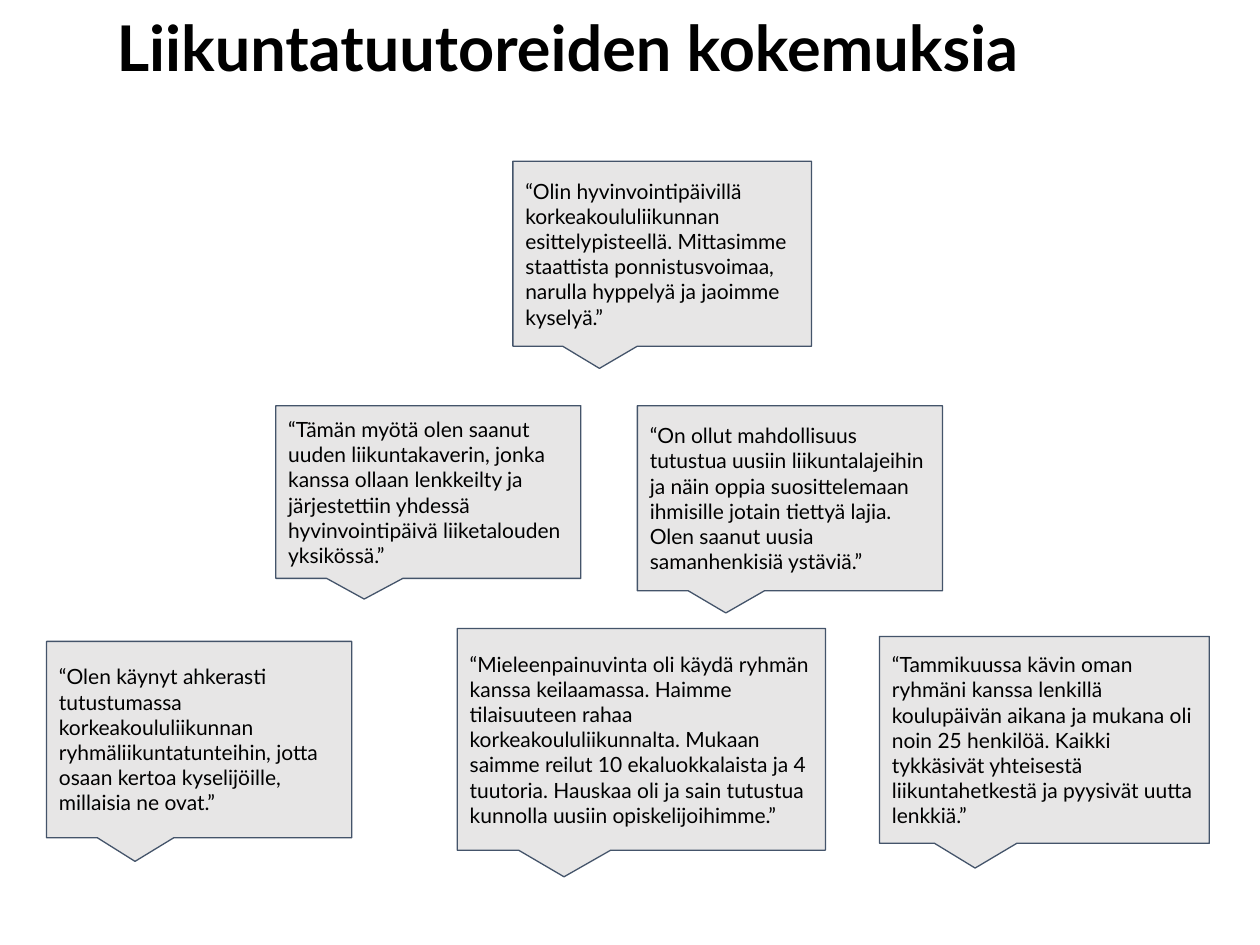
"""Build a slide of exercise tutors' experiences quoted in speech callouts."""
from pptx import Presentation
from pptx.dml.color import RGBColor
from pptx.enum.shapes import MSO_SHAPE
from pptx.enum.text import MSO_ANCHOR, MSO_AUTO_SIZE, PP_ALIGN
from pptx.util import Cm, Pt

CALLOUT = MSO_SHAPE.ROUNDED_RECTANGULAR_CALLOUT
MIDDLE = MSO_ANCHOR.MIDDLE
NO_AUTOFIT = MSO_AUTO_SIZE.NONE
CENTER, LEFT = PP_ALIGN.CENTER, PP_ALIGN.LEFT
TITLE_ONLY = 5

COLOURS = {"text": "000000", "callout": "E7E6E6", "outline": "44546A"}

HEADING = "Liikuntatuutoreiden kokemuksia"
HEADING_BOX = (0.2, 0, 22.48, 2.06)

QUOTES = [
    ("“Mieleenpainuvinta oli käydä ryhmän kanssa keilaamassa. Haimme tilaisuuteen "
     "rahaa korkeakoululiikunnalta. Mukaan saimme reilut 10 ekaluokkalaista ja 4 "
     "tuutoria. Hauskaa oli ja sain tutustua kunnolla uusiin opiskelijoihimme.”",
     (9.22, 12.67, 7.42, 4.47)),
    ("“Olin hyvinvointipäivillä korkeakoululiikunnan esittelypisteellä. Mittasimme "
     "staattista ponnistusvoimaa, narulla hyppelyä ja jaoimme kyselyä.”",
     (10.34, 3.25, 6.02, 3.73)),
    ("“Tämän myötä olen saanut uuden liikuntakaverin, jonka kanssa ollaan lenkkeilty "
     "ja järjestettiin yhdessä hyvinvointipäivä liiketalouden yksikössä.”",
     (5.56, 8.18, 6.15, 3.48)),
    ("“Olen käynyt ahkerasti tutustumassa korkeakoululiikunnan "
     "ryhmäliikuntatunteihin, jotta osaan kertoa kyselijöille, millaisia ne ovat.”",
     (0.94, 12.93, 6.15, 3.96)),
    ("“Tammikuussa kävin oman ryhmäni kanssa lenkillä koulupäivän aikana ja mukana "
     "oli noin 25 henkilöä. Kaikki tykkäsivät yhteisestä liikuntahetkestä ja "
     "pyysivät uutta lenkkiä.”",
     (17.73, 12.83, 6.65, 4.17)),
    ("“On ollut mahdollisuus tutustua uusiin liikuntalajeihin ja näin oppia "
     "suosittelemaan ihmisille jotain tiettyä lajia. Olen saanut uusia "
     "samanhenkisiä ystäviä.”",
     (12.85, 8.18, 6.15, 3.73)),
]

POINTER = (-0.21, 0.62, 0)
FRAME = {"word_wrap": True, "auto_size": NO_AUTOFIT, "vertical_anchor": MIDDLE,
         "margin_left": Cm(0.25), "margin_right": Cm(0.25),
         "margin_top": Cm(0.25), "margin_bottom": Cm(0.25)}
HEADING_FONT = {"name": "Lato", "size": Pt(36), "bold": True}
QUOTE_FONT = {"name": "Lato", "size": Pt(12), "bold": False}
HEADING_PARAGRAPH = {"alignment": CENTER, "line_spacing": 0.9}
QUOTE_PARAGRAPH = {"alignment": LEFT}


def colour(role):
    return RGBColor.from_string(COLOURS[role])


def apply(target, values):
    for key, value in values.items():
        setattr(target, key, value)


def write(holder, wording, font, paragraph_format):
    frame = holder.text_frame
    frame.text = wording
    apply(frame, FRAME)
    paragraph = frame.paragraphs[0]
    apply(paragraph, paragraph_format)
    run = paragraph.runs[0]
    apply(run.font, font)
    run.font.color.rgb = colour("text")


def add_quote(slide, wording, box):
    callout = slide.shapes.add_shape(CALLOUT, *map(Cm, box))
    callout.shadow.inherit = False
    for index, value in enumerate(POINTER):
        callout.adjustments[index] = value
    callout.fill.solid()
    callout.fill.fore_color.rgb = colour("callout")
    callout.line.color.rgb = colour("outline")
    callout.line.width = Pt(0.75)
    write(callout, wording, QUOTE_FONT, QUOTE_PARAGRAPH)


def main():
    deck = Presentation()
    apply(deck, {"slide_width": Cm(25.4), "slide_height": Cm(19.05)})
    slide = deck.slides.add_slide(deck.slide_layouts[TITLE_ONLY])
    heading = slide.shapes.title
    apply(heading, dict(zip(("left", "top", "width", "height"), map(Cm, HEADING_BOX))))
    write(heading, HEADING, HEADING_FONT, HEADING_PARAGRAPH)
    for wording, box in QUOTES:
        add_quote(slide, wording, box)
    deck.save("out.pptx")


if __name__ == "__main__":
    main()
